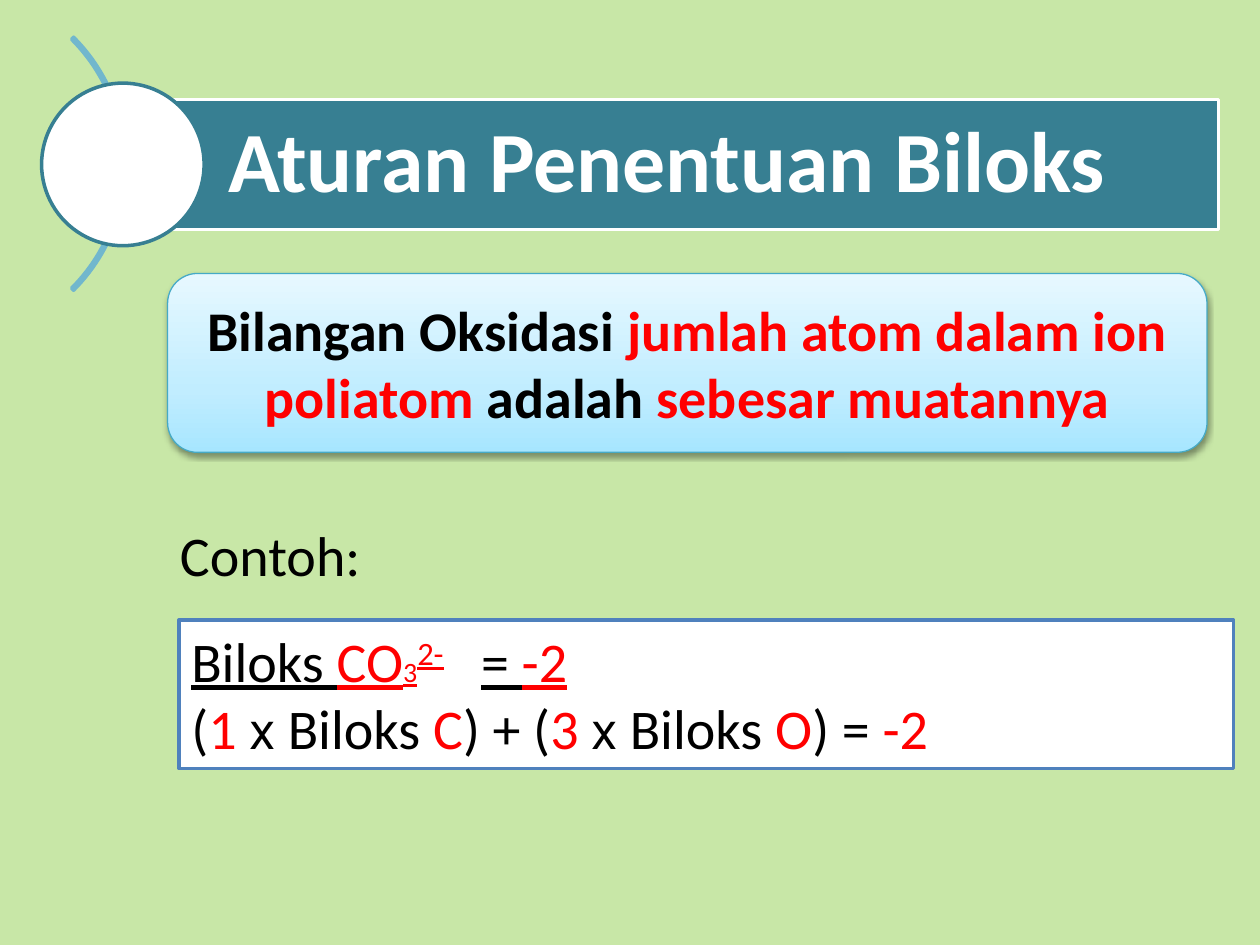
"""Build the slide on the oxidation number rule for polyatomic ions."""
from copy import deepcopy
from lxml import etree
from pptx import Presentation
from pptx.dml.color import RGBColor
from pptx.enum import shapes, text
from pptx.oxml import parse_xml
from pptx.oxml.ns import qn
from pptx.util import Inches, Pt

INK = {"back": "C8E7A7", "black": "000000", "red": "FF0000", "white": "FFFFFF",
       "teal": "377F92", "arc": "71B7CD", "edge": "46AAC5", "blue": "4F81BD"}
STOPS = [(0, "A7E6FF"), (35, "C1EDFF"), (100, "E7F8FF")]
NS = "http://schemas.openxmlformats.org/drawingml/2006/main"
SHADOW = (f'<a:effectLst xmlns:a="{NS}"><a:outerShdw blurRad="{Pt(3.1)}" dist="{Pt(1.6)}" '
          'dir="5400000" rotWithShape="0"><a:srgbClr val="000000"><a:alpha val="38000"/>'
          '</a:srgbClr></a:outerShdw></a:effectLst>')

RED, CROSS, LINE = {"ink": "red"}, {"name": "Cambria"}, {"underline": True}
TITLE = [[("Aturan Penentuan Biloks", {"size": Pt(49), "bold": True, "ink": "white"})]]
BOLD = {"bold": True}
RULE = [[("Bilangan Oksidasi ", BOLD), ("jumlah atom dalam ion poliatom ", BOLD | RED),
         ("adalah ", BOLD), ("sebesar muatannya", BOLD | RED)]]
LABEL = [[("Contoh:", {})]]
SUM = [
    [("Biloks ", LINE), ("CO", LINE | RED), ("3", LINE | RED | {"size": Pt(16)}),
     ("2-", LINE | RED | {"base": 30000}), ("\t= ", LINE), ("-2", LINE | RED)],
    [("(", {}), ("1 ", RED), ("𝗑 ", CROSS), ("Biloks ", {}), ("C", RED), (") + (", {}),
     ("3 ", RED), ("𝗑 ", CROSS), ("Biloks ", {}), ("O", RED), (") = ", {}), ("-2", RED)],
]


def rgb(name):
    return RGBColor.from_string(INK[name])


def place(shape, box):
    for key, val in zip(("left", "top", "width", "height"), box):
        setattr(shape, key, Inches(val))


def paint(shape, fill, line, width=2):
    if fill:
        shape.fill.solid()
        shape.fill.fore_color.rgb = rgb(fill)
    else:
        shape.fill.background()
    shape.line.color.rgb = rgb(line)
    shape.line.width = Pt(width)


def draw(slide, kind, box, fill, line, width=2):
    shape = slide.shapes.add_shape(kind, *map(Inches, box))
    shape.shadow.inherit = False
    paint(shape, fill, line, width)
    return shape


def write(shape, rows, frame, **para):
    body = shape.text_frame
    for key, val in ({"word_wrap": True} | frame).items():
        setattr(body, key, val)
    for i, row in enumerate(rows):
        par = body.add_paragraph() if i else body.paragraphs[0]
        for key, val in para.items():
            setattr(par, key, val)
        for words, style in row:
            run = par.add_run()
            run.text = words
            style = {"name": "Calibri", "size": Pt(32), "ink": "black"} | style
            run.font.color.rgb = rgb(style.pop("ink"))
            base = style.pop("base", None)
            for key, val in style.items():
                setattr(run.font, key, val)
            if base:
                run._r.get_or_add_rPr().set("baseline", str(base))


def shade(shape):
    shape.fill.gradient()
    shape.fill.gradient_angle = 90
    group = shape._element.spPr.find(qn("a:gradFill")).find(qn("a:gsLst"))
    group.insert(1, deepcopy(group[0]))
    for stop, (pos, tint) in zip(group, STOPS):
        stop.set("pos", str(pos * 1000))
        for old in list(stop):
            stop.remove(old)
        etree.SubElement(stop, qn("a:srgbClr"), val=tint)
    props = shape._element.spPr
    props.replace(props.find(qn("a:effectLst")), parse_xml(SHADOW))


def main():
    deck = Presentation()
    deck.slide_width, deck.slide_height = Inches(10), Inches(7.5)
    slide = deck.slides.add_slide(deck.slide_layouts[5])
    slide.background.fill.solid()
    slide.background.fill.fore_color.rgb = rgb("back")
    kinds, left = shapes.MSO_SHAPE, text.PP_ALIGN.LEFT
    middle = {"vertical_anchor": text.MSO_ANCHOR.MIDDLE}

    title = slide.shapes.title
    place(title, (0.98, 0.79, 8.69, 1.03))
    paint(title, "teal", "white")
    inset = {f"margin_{side}": Inches(0.14) for side in ("top", "right", "bottom")}
    write(title, TITLE, middle | inset | {"margin_left": Inches(0.83),
          "auto_size": text.MSO_AUTO_SIZE.NONE}, alignment=left, line_spacing=0.9)

    arc = draw(slide, kinds.BLOCK_ARC, (-1.84, -0.12, 2.84, 2.84), None, "arc")
    for i, val in enumerate((189, 27, 0.008)):
        arc.adjustments[i] = val
    title._element.addprevious(arc._element)
    draw(slide, kinds.OVAL, (0.33, 0.66, 1.29, 1.29), "white", "teal")

    rule = draw(slide, kinds.ROUNDED_RECTANGLE, (1.33, 2.17, 8.25, 1.42), None, "edge", 0.75)
    shade(rule)
    write(rule, RULE, middle, alignment=text.PP_ALIGN.CENTER)

    label = slide.shapes.add_textbox(*map(Inches, (1.33, 4.08, 1.88, 0.55)))
    write(label, LABEL, {}, alignment=left)

    total = draw(slide, kinds.RECTANGLE, (1.42, 4.92, 8.37, 1.18), "white", "blue")
    first = total.text_frame.paragraphs[0]._p.get_or_add_pPr()
    tabs = etree.SubElement(first, qn("a:tabLst"))
    etree.SubElement(tabs, qn("a:tab"), pos=str(Inches(2.3)), algn="l")
    write(total, SUM, {"vertical_anchor": text.MSO_ANCHOR.TOP,
          "auto_size": text.MSO_AUTO_SIZE.SHAPE_TO_FIT_TEXT}, alignment=left)
    deck.save("out.pptx")


if __name__ == "__main__":
    main()
